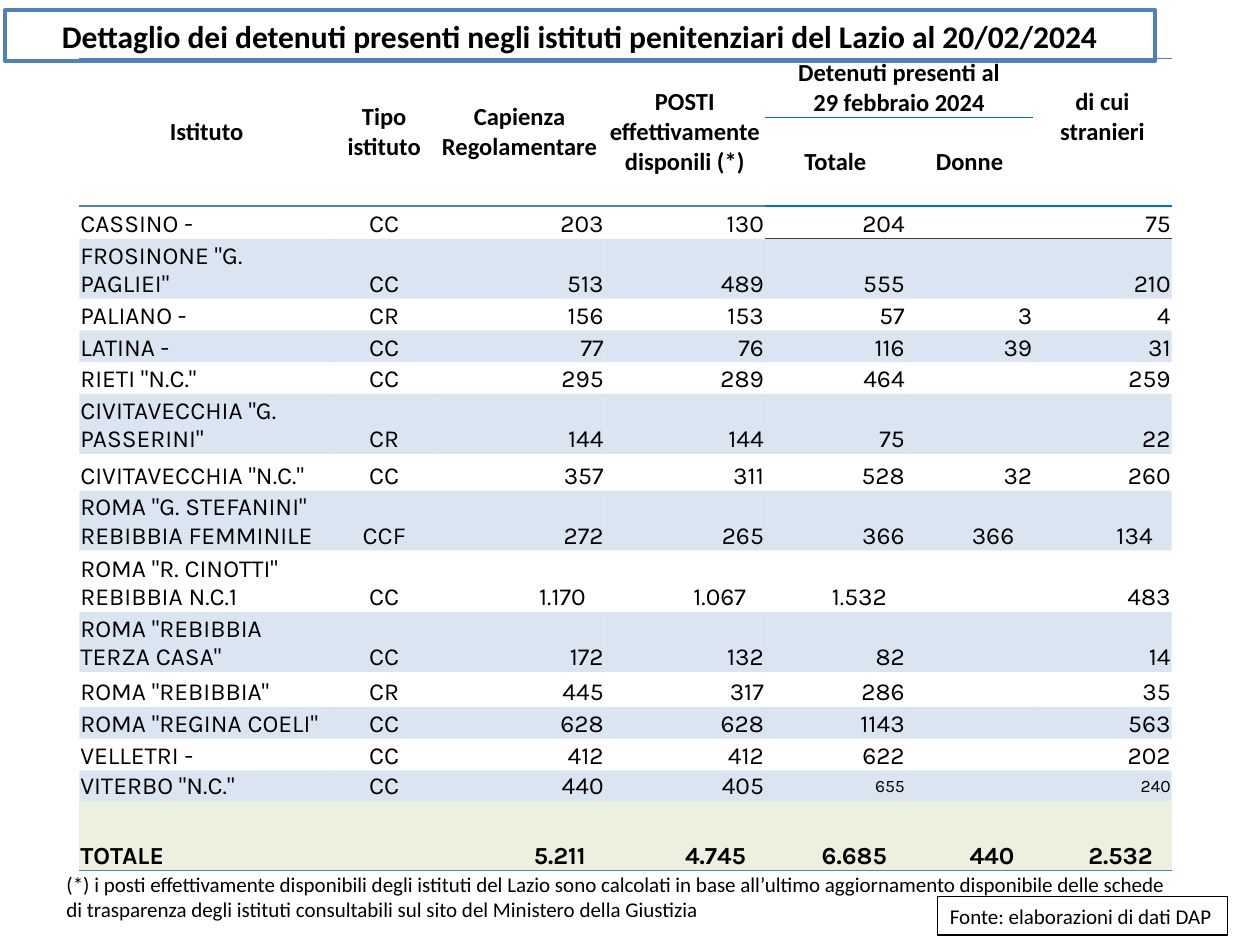
from lxml import etree
from pptx import Presentation, util as u
from pptx.dml.color import RGBColor
from pptx.enum import shapes, text
from pptx.oxml.ns import qn

BLACK, WHITE, GREY = "000000", "FFFFFF", "404040"
BLUE, DEEP_BLUE, GREEN = "4F81BD", "0070C0", "EBF1DE"
LEFT, CENTER, RIGHT = text.PP_ALIGN.LEFT, text.PP_ALIGN.CENTER, text.PP_ALIGN.RIGHT
MIDDLE, BOTTOM = text.MSO_ANCHOR.MIDDLE, text.MSO_ANCHOR.BOTTOM
PLAIN_TABLE = "{2D5ABB26-0587-4C30-8999-92F81FD0307C}"

COLUMNS = [5.13, 2.03, 3.43, 3.23, 2.84, 2.57, 2.79]
ROWS = [1.14, 1.09, 0.66, 0.97, 0.64, 0.64, 0.64, 1.17, 0.74,
        1.17, 1.24, 1.17, 0.71, 0.64, 0.64, 0.61, 1.4]

# (row, column): (text, rows spanned, columns spanned)
HEADERS = {
    (0, 0): ("Istituto", 2, 1),
    (0, 1): ("Tipo istituto", 2, 1),
    (0, 2): ("Capienza\nRegolamentare", 2, 1),
    (0, 3): ("POSTI\veffettivamente disponili (*)", 2, 1),
    (0, 4): ("Detenuti presenti al\n29 febbraio 2024", 1, 2),
    (0, 6): ("di cui\nstranieri", 2, 1),
    (1, 4): ("Totale", 1, 1),
    (1, 5): ("Donne", 1, 1),
}
PRISONS = [
    ("CASSINO -", "CC", "203", "130", "204", "", "75"),
    ('FROSINONE "G. PAGLIEI"', "CC", "513", "489", "555", "", "210"),
    ("PALIANO -", "CR", "156", "153", "57", "3", "4"),
    ("LATINA -", "CC", "77", "76", "116", "39", "31"),
    ('RIETI "N.C."', "CC", "295", "289", "464", "", "259"),
    ('CIVITAVECCHIA "G. PASSERINI"', "CR", "144", "144", "75", "", "22"),
    ('CIVITAVECCHIA "N.C."', "CC", "357", "311", "528", "32", "260"),
    ('ROMA "G. STEFANINI" REBIBBIA FEMMINILE', "CCF", "272", "265", "366", "366", "134"),
    ('ROMA "R. CINOTTI" REBIBBIA N.C.1', "CC", "1.170", "1.067", "1.532", "", "483"),
    ('ROMA "REBIBBIA TERZA CASA"', "CC", "172", "132", "82", "", "14"),
    ('ROMA "REBIBBIA"', "CR", "445", "317", "286", "", "35"),
    ('ROMA "REGINA COELI"', "CC", "628", "628", "1143", "", "563"),
    ("VELLETRI -", "CC", "412", "412", "622", "", "202"),
    ('VITERBO "N.C."', "CC", "440", "405", "655", "", "240"),
    ("TOTALE", "", "5.211", "4.745", "6.685", "440", "2.532"),
]
INDENTED = {(7, 5), (7, 6), (8, 2), (8, 3), (8, 4)} | {(14, col) for col in range(2, 7)}
SMALL = {(13, 4), (13, 6)}


def color(value):
    return RGBColor.from_string(value)


class Slide:
    """Holds the text style and the page being filled."""
    font = "Calibri"

    def __init__(self, deck):
        self.page = deck.slides.add_slide(deck.slide_layouts[6])

    def set_text(self, frame, words, size, bold=False, align=LEFT, font=None):
        frame.text = words
        for para in frame.paragraphs:
            para.alignment = align
            para.font.size, para.font.bold = u.Pt(size), bold
            para.font.name = font or self.font
            para.font.color.rgb = color(BLACK)
            if not words:
                etree.SubElement(para._p, qn("a:endParaRPr"), sz=str(size * 100))

    def panel(self, place, words, size, line, weight, wrap=True, **style):
        box = self.page.shapes.add_shape(shapes.MSO_SHAPE.RECTANGLE, *map(u.Cm, place))
        box.shadow.inherit = False
        box.fill.solid()
        box.fill.fore_color.rgb = color(WHITE)
        box.line.color.rgb = color(line)
        box.line.width = u.Pt(weight)
        box.text_frame.word_wrap = wrap
        self.set_text(box.text_frame, words, size, **style)

    def note(self, place, words, size):
        box = self.page.shapes.add_textbox(*map(u.Cm, place))
        box.text_frame.word_wrap = True
        self.set_text(box.text_frame, words, size)

    def table(self, left, top, columns, rows):
        frame = self.page.shapes.add_table(
            len(rows), len(columns), u.Cm(left), u.Cm(top),
            u.Cm(sum(columns)), u.Cm(sum(rows)))
        grid = frame.table
        grid.first_row = grid.horz_banding = False
        grid._tbl.tblPr.find(qn("a:tableStyleId")).text = PLAIN_TABLE
        for column, width in zip(grid.columns, columns):
            column.width = u.Cm(width)
        for row, height in zip(grid.rows, rows):
            row.height = u.Cm(height)
        return grid

    def cell(self, cell, words, anchor, margins, size=14, **style):
        """Fill in a cell; margins are left, right, top and bottom in cm."""
        cell.vertical_anchor = anchor
        (cell.margin_left, cell.margin_right,
         cell.margin_top, cell.margin_bottom) = map(u.Cm, margins)
        self.set_text(cell.text_frame, words, size, **style)

    def border(self, cell, side, value, weight=1):
        """Rule one side (T or B); call for T before B and before shade."""
        line = etree.SubElement(cell._tc.get_or_add_tcPr(), qn("a:ln" + side),
                                w=str(u.Pt(weight)))
        fill = etree.SubElement(line, qn("a:solidFill"))
        etree.SubElement(fill, qn("a:srgbClr"), val=value)

    def shade(self, cell, value, opacity=100):
        cell.fill.solid()
        cell.fill.fore_color.rgb = color(value)
        if opacity < 100:
            tint = cell._tc.tcPr.find(qn("a:solidFill")).find(qn("a:srgbClr"))
            etree.SubElement(tint, qn("a:alpha"), val=str(opacity * 1000))


def fill_headers(slide, grid):
    for (row, col), (words, down, across) in HEADERS.items():
        cell = grid.cell(row, col)
        if down * across > 1:
            cell.merge(grid.cell(row + down - 1, col + across - 1))
        raised = 0.6 if col == 6 else 0
        slide.cell(cell, words, MIDDLE, (0, 0, 0, raised), bold=True, align=CENTER)
    for col in range(len(COLUMNS)):
        upper, lower, first = (grid.cell(row, col) for row in range(3))
        base = BLUE if col < 4 else DEEP_BLUE
        slide.border(upper, "T", BLUE)
        slide.border(upper, "B", base)
        if col in (4, 5):
            slide.border(lower, "T", DEEP_BLUE)
        slide.border(lower, "B", base)
        if col >= 4:
            slide.border(first, "T", DEEP_BLUE)
            slide.border(first, "B", GREY, 0.5)


def fill_prisons(slide, grid):
    last = len(PRISONS) - 1
    for row, values in enumerate(PRISONS):
        for col, words in enumerate(values):
            cell = grid.cell(row + 2, col)
            small = (row, col) in SMALL
            right = 0.38 if (row, col) in INDENTED else 0.02
            slide.cell(cell, words, MIDDLE if small else BOTTOM, (0.02, right, 0.02, 0),
                       size=10 if small or not words else 14, bold=row == last,
                       align=(LEFT, CENTER)[col] if col < 2 else RIGHT, font="Karla")
            if row == last:
                slide.border(cell, "B", BLUE)
                slide.shade(cell, GREEN)
            elif row % 2:
                slide.shade(cell, BLUE, 20)


def main():
    deck = Presentation()
    deck.slide_width, deck.slide_height = u.Cm(25.4), u.Cm(19.05)
    slide = Slide(deck)
    slide.panel((0.1, 0.2, 23.19, 1.03),
                "Dettaglio dei detenuti presenti negli istituti penitenziari del Lazio al 20/02/2024",
                18, BLUE, 2, bold=True, align=CENTER)
    slide.note((1.09, 17.45, 23.01, 1.27),
               "(*) i posti effettivamente disponibili degli istituti del Lazio sono calcolati in "
               "base all’ultimo aggiornamento disponibile delle schede di trasparenza degli "
               "istituti consultabili sul sito del Ministero della Giustizia", 12)
    slide.panel((18.9, 18.08, 5.84, 0.77), "Fonte: elaborazioni di dati DAP",
                12, BLACK, 0.75, wrap=False)
    grid = slide.table(1.6, 1.18, COLUMNS, ROWS)
    fill_headers(slide, grid)
    fill_prisons(slide, grid)
    deck.save("out.pptx")


if __name__ == "__main__":
    main()
